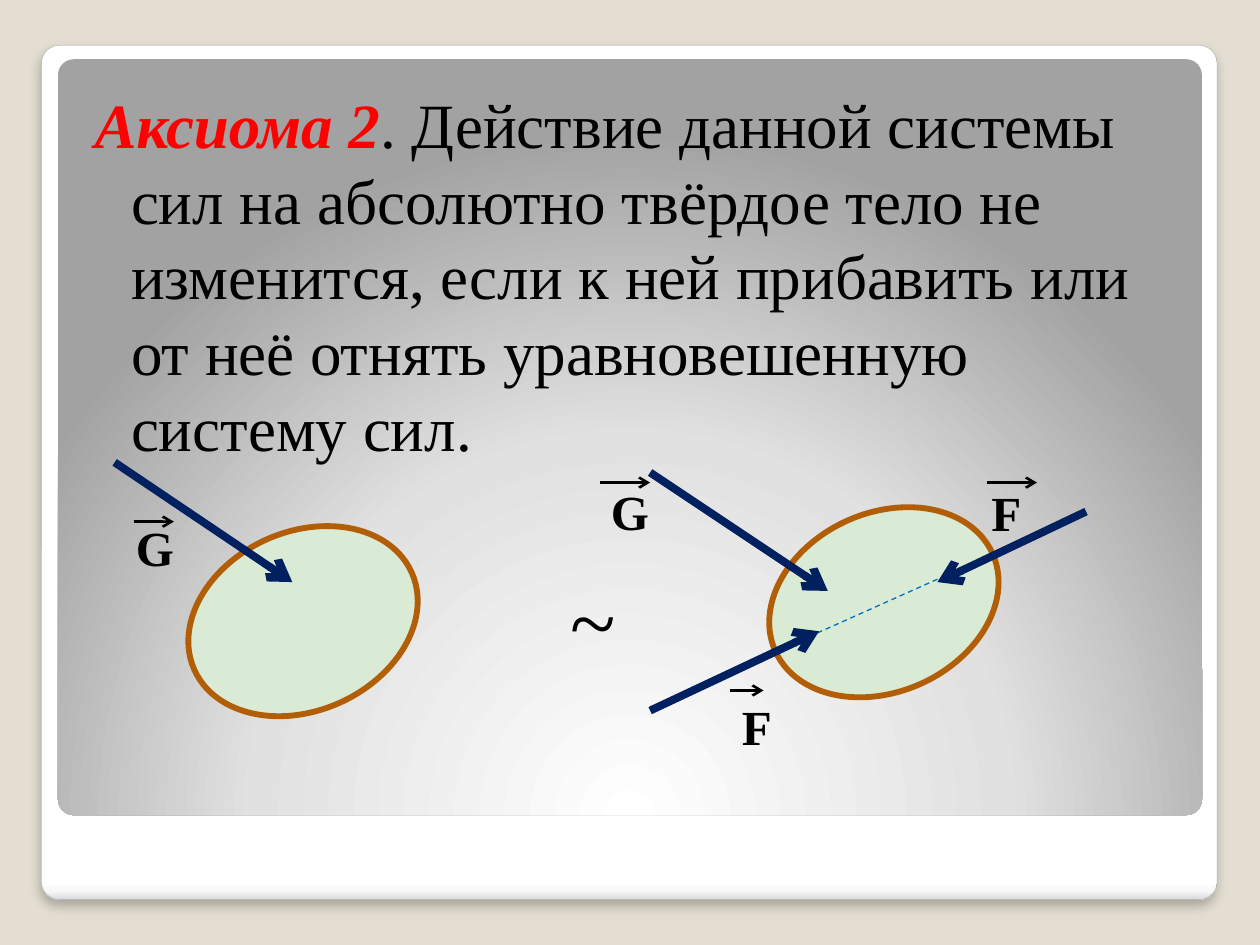
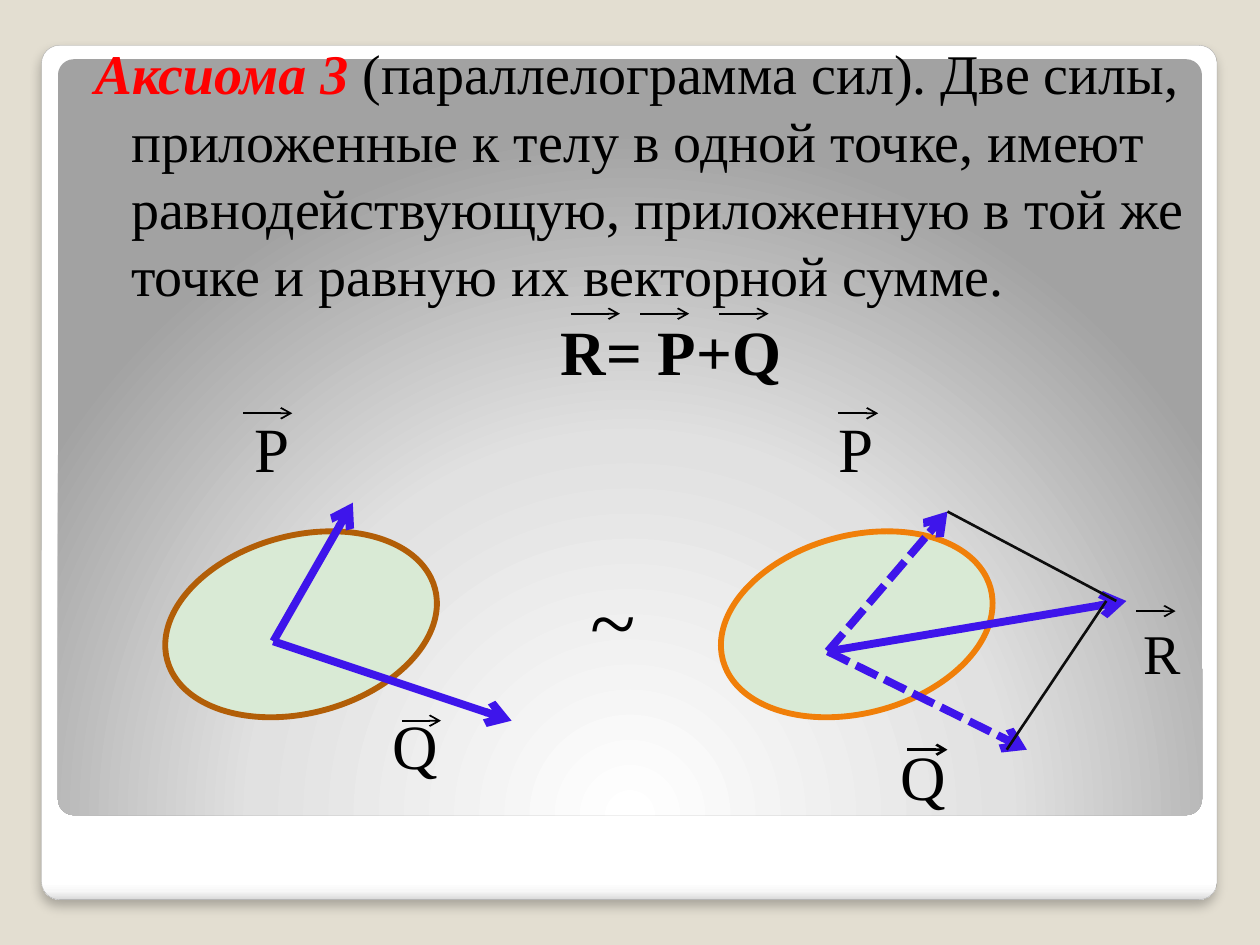
from lxml.etree import SubElement
from pptx import Presentation
from pptx.dml.color import RGBColor
from pptx.enum.dml import MSO_LINE
from pptx.enum.shapes import MSO_CONNECTOR, MSO_SHAPE
from pptx.enum.text import PP_ALIGN
from pptx.oxml import parse_xml
from pptx.oxml.ns import nsdecls, qn
from pptx.util import Inches, Pt

WIDE, HIGH = 10, 7.5
FONT = "Times New Roman"
INK = dict(page="E3DED1", edge="A4A4A4", black="000000", soft="0D0D0D", red="FF0000",
           body="D9EAD5", brown="B25E07", orange="F07F09",
           navy="002060", blue="3E15EB", axis="0070C0")
CARD = [(0, "FFFFFF"), (98, "FFFFFF"), (99, "F7F7F7"), (100, "DADADA")]
GLOW = [(0, "FFFFFF"), (55, "E1E1E1"), (100, "A2A2A2")]
DOWN = '<a:lin ang="5400000" scaled="0"/>'
ROUND = ('<a:path path="circle"><a:fillToRect l="50000" t="175000" '
         'r="50000" b="-75000"/></a:path>')

# bodies: box, turn, outline
# forces: from, to, colour, width, dash, arrowhead
# labels: text, (left, top), size, bold
# marks (vector signs over letters): (left, top), length, width
SLIDES = [
    dict(
        text=dict(box=(0.55, 0.58, 8.95, 5.9), size=36, head="Аксиома 2",
                  rest=". Действие данной системы сил на абсолютно твёрдое тело не "
                       "изменится, если к ней прибавить или от неё отнять "
                       "уравновешенную систему сил."),
        bodies=[((x, y, 1.89, 1.42), 335.9, "brown") for x, y in ((1.46, 4.22), (6.07, 4.07))],
        forces=[
            ((0.91, 3.67), (2.32, 4.62), "navy", 4.5, None, True),
            ((5.16, 3.75), (6.57, 4.69), "navy", 4.5, None, True),
            ((6.16, 5.17), (7.88, 4.4), "axis", 0.75, MSO_LINE.DASH, False),
            ((8.62, 4.06), (7.44, 4.62), "navy", 4.5, None, True),
            ((5.16, 5.64), (6.5, 5.01), "navy", 4.5, None, True),
        ],
        labels=[
            ("G", (0.98, 4.06), 28, True), ("G", (4.75, 3.77), 28, True),
            ("F", (7.77, 3.78), 28, True), ("F", (5.79, 5.48), 28, True),
            ("~", (4.43, 4.46), 48, False),
        ],
        marks=[((1.06, 4.14), 0.32, 1.5), ((4.76, 3.83), 0.4, 1.5),
               ((5.79, 5.48), 0.27, 1.5), ((7.83, 3.83), 0.4, 1.5)],
    ),
    dict(
        text=dict(box=(0.55, 0.21, 9.45, 3), size=32, head="Аксиома 3",
                  rest=" (параллелограмма сил). Две силы, приложенные к телу в одной "
                       "точке, имеют равнодействующую, приложенную в той же точке и "
                       "равную их векторной сумме.",
                  sum="R= P+Q"),
        bodies=[((x, 4.25, 2.2, 1.41), 345, edge) for x, edge in ((1.29, "brown"), (5.7, "orange"))],
        forces=[
            ((2.17, 5.09), (2.8, 3.99), "blue", 4.5, None, True),
            ((2.17, 5.09), (4.06, 5.72), "blue", 4.5, None, True),
            ((6.57, 5.17), (7.52, 4.06), "blue", 4.5, MSO_LINE.SQUARE_DOT, True),
            ((6.57, 5.17), (8.15, 5.95), "blue", 4.5, MSO_LINE.SQUARE_DOT, True),
            ((6.57, 5.17), (8.94, 4.77), "blue", 4.5, None, True),
            ((7.52, 4.06), (8.86, 4.77), "soft", 1.5, None, False),
            ((7.99, 5.95), (8.78, 4.77), "soft", 1.5, None, False),
        ],
        labels=[
            ("~", (4.59, 4.46), 48, False),
            ("P", (1.92, 3.2), 36, False), ("P", (6.56, 3.2), 36, False),
            ("Q", (3.02, 5.56), 36, False), ("Q", (7.05, 5.8), 36, False),
            ("R", (8.98, 4.86), 32, False),
        ],
        marks=[((1.93, 3.28), 0.39, 1), ((3.19, 5.72), 0.31, 1),
               ((6.65, 3.28), 0.32, 1), ((9.02, 4.85), 0.31, 1),
               ((7.2, 5.95), 0.32, 1.5)]
              + [((x, 2.49), 0.39, 1) for x in (4.53, 5.08, 5.71)],
    ),
]


def tint(name):
    return RGBColor.from_string(INK[name])


def shape(slide, kind, box, edge=None, width=1):
    item = slide.shapes.add_shape(kind, *map(Inches, box))
    item.shadow.inherit = False
    if edge:
        item.line.color.rgb = tint(edge)
        item.line.width = Pt(width)
    else:
        item.line.fill.background()
    return item


def panel(slide, box, stops, way, edge=None):
    """Round-cornered panel with a gradient; way is the XML of its direction."""
    item = shape(slide, MSO_SHAPE.ROUNDED_RECTANGLE, box, edge, 0.16)
    item.adjustments[0] = 0.021
    steps = "".join(f'<a:gs pos="{pos * 1000}"><a:srgbClr val="{hue}"/></a:gs>'
                    for pos, hue in stops)
    fill = parse_xml(f'<a:gradFill {nsdecls("a")} rotWithShape="1">'
                     f"<a:gsLst>{steps}</a:gsLst>{way}</a:gradFill>")
    item.element.spPr.find(qn("a:prstGeom")).addnext(fill)
    return item


def frame(slide):
    card = panel(slide, (0.33, 0.36, WIDE - 0.67, 6.78), CARD, DOWN, "edge")
    glow = card.element.spPr.find(qn("a:effectLst"))
    glow.append(parse_xml(
        f'<a:outerShdw {nsdecls("a")} blurRad="{Pt(6)}" dist="{Pt(4)}" dir="5400000" '
        'algn="ctr" rotWithShape="0"><a:srgbClr val="000000">'
        '<a:alpha val="25000"/></a:srgbClr></a:outerShdw>'))
    panel(slide, (0.46, 0.47, WIDE - 0.92, 6), GLOW, ROUND)


def write(para, text, size, color="black", bold=False, italic=False):
    run = para.add_run()
    run.text = text
    font = run.font
    font.name, font.size, font.bold, font.italic = FONT, Pt(size), bold, italic
    font.color.rgb = tint(color)


def area(slide, box):
    block = slide.shapes.add_textbox(*map(Inches, box)).text_frame
    block.word_wrap = True
    return block


def hang(para):
    """Set the hanging indent of the main text."""
    props = para._p.get_or_add_pPr()
    props.set("marL", str(Inches(0.29)))
    props.set("indent", str(-Inches(0.29)))


def axiom(slide, box, size, head, rest, sum=None):
    block = area(slide, box)
    block.margin_left, block.margin_top = Inches(0.2), Inches(0.1)
    para = block.paragraphs[0]
    hang(para)
    write(para, head, size, "red", bold=True, italic=True)
    write(para, rest, size)
    if sum:
        para = block.add_paragraph()
        hang(para)
        para.alignment = PP_ALIGN.CENTER
        para.space_before = Pt(2.5)
        write(para, sum, 36, bold=True)


def line(slide, start, end, color, width, dash=None, arrow=True):
    link = slide.shapes.add_connector(MSO_CONNECTOR.STRAIGHT, *map(Inches, start + end))
    link.line.color.rgb = tint(color)
    link.line.width = Pt(width)
    if dash:
        link.line.dash_style = dash
    if arrow:
        SubElement(link.line._get_or_add_ln(), qn("a:tailEnd"), type="arrow")
    SubElement(link.element.spPr, qn("a:effectLst"))


def draw(slide, text, bodies, forces, labels, marks):
    frame(slide)
    axiom(slide, **text)
    for box, turn, edge in bodies:
        oval = shape(slide, MSO_SHAPE.OVAL, box, edge, 3.35)
        oval.rotation = turn
        oval.fill.solid()
        oval.fill.fore_color.rgb = tint("body")
    for force in forces:
        line(slide, *force)
    for name, spot, size, bold in labels:
        write(area(slide, spot + (0.7, size / 50)).paragraphs[0], name, size, bold=bold)
    for (left, top), span, width in marks:
        line(slide, (left, top), (left + span, top), "black", width)


def main():
    deck = Presentation()
    deck.slide_width, deck.slide_height = Inches(WIDE), Inches(HIGH)
    back = deck.slide_master.background.fill
    back.solid()
    back.fore_color.rgb = tint("page")
    for parts in SLIDES:
        draw(deck.slides.add_slide(deck.slide_layouts[6]), **parts)
    deck.save("out.pptx")


if __name__ == "__main__":
    main()
